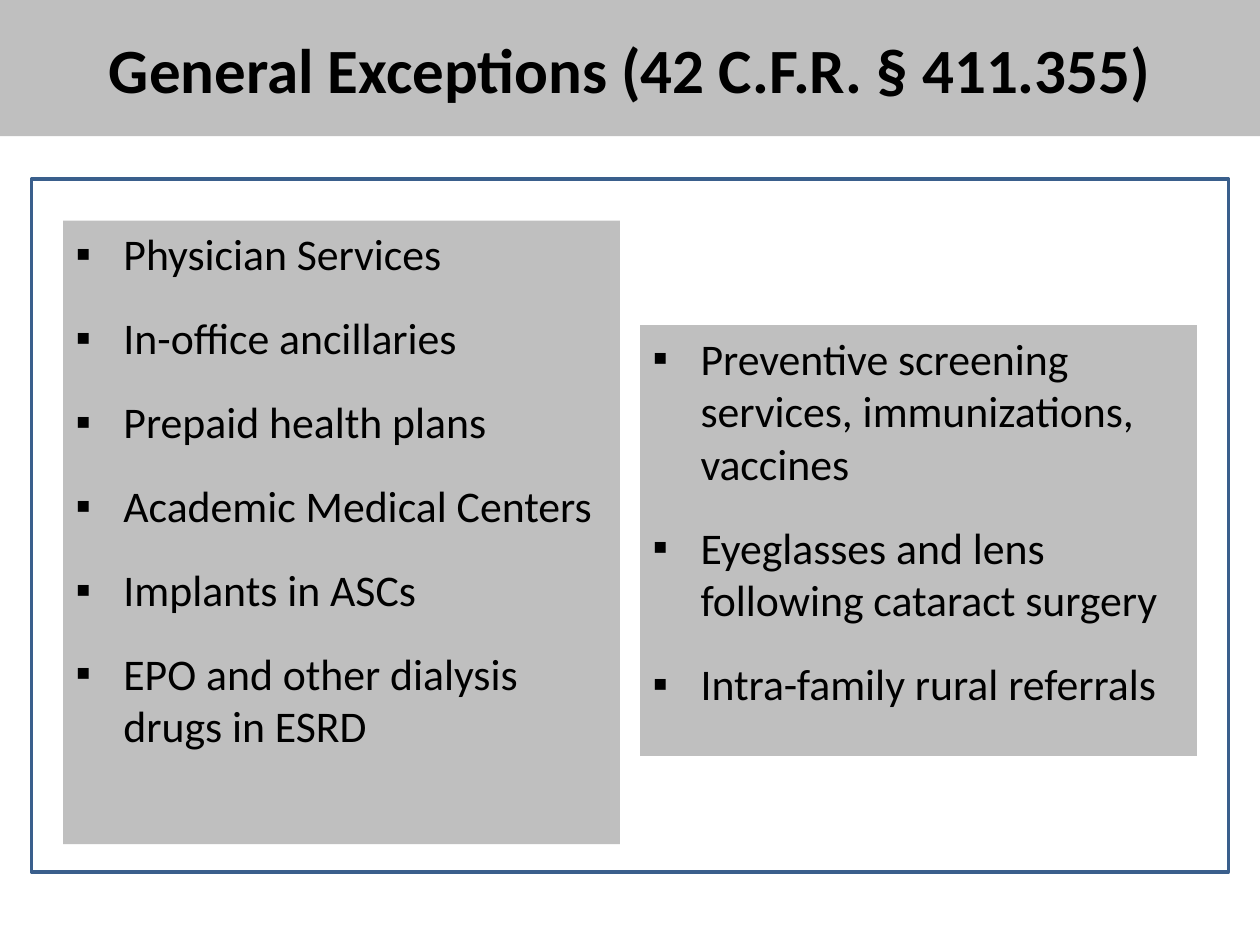
from dataclasses import dataclass

from lxml.etree import SubElement
from pptx import Presentation
from pptx.dml.color import RGBColor
from pptx.enum.shapes import MSO_SHAPE
from pptx.enum.text import MSO_ANCHOR, MSO_AUTO_SIZE, PP_ALIGN
from pptx.oxml.ns import qn
from pptx.util import Inches, Pt

HEADING = "General Exceptions (42 C.F.R. § 411.355)"
EXCEPTIONS = [
    {
        "top": 1.75,
        "height": 4.95,
        "items": [
            "Physician Services",
            "In-office ancillaries",
            "Prepaid health plans",
            "Academic Medical Centers",
            "Implants in ASCs",
            "EPO and other dialysis drugs in ESRD",
        ],
    },
    {
        "top": 2.58,
        "height": 3.42,
        "items": [
            "Preventive screening services, immunizations, vaccines",
            "Eyeglasses and lens following cataract surgery",
            "Intra-family rural referrals",
        ],
    },
]


@dataclass(frozen=True)
class Theme:
    font: str = "Calibri"
    text: RGBColor = RGBColor(0x00, 0x00, 0x00)
    panel: RGBColor = RGBColor(0xBF, 0xBF, 0xBF)
    border: RGBColor = RGBColor(0x3A, 0x5F, 0x8C)
    heading_size: int = 36
    item_size: int = 25
    item_gap: int = 18
    border_width: int = 2


THEME = Theme()
SLIDE_WIDTH, SLIDE_HEIGHT = 10, 7.5
MARGIN, COLUMN_WIDTH = 0.5, 4.42
COLUMN_STEP = SLIDE_WIDTH - 2 * MARGIN - COLUMN_WIDTH
INDENT = Inches(0.38)


def place(panel, left, top, width, height):
    panel.left, panel.top = Inches(left), Inches(top)
    panel.width, panel.height = Inches(width), Inches(height)
    panel.fill.solid()
    panel.fill.fore_color.rgb = THEME.panel
    panel.text_frame.word_wrap = True
    panel.text_frame.auto_size = MSO_AUTO_SIZE.NONE


def format_runs(paragraph, size, bold=False):
    for run in paragraph.runs:
        run.font.name = THEME.font
        run.font.size = Pt(size)
        run.font.bold = bold
        run.font.color.rgb = THEME.text


def add_bullet(paragraph):
    paragraph.space_before = Pt(0)
    paragraph.space_after = Pt(THEME.item_gap)
    properties = paragraph._p.get_or_add_pPr()
    properties.set("marL", str(INDENT))
    properties.set("indent", str(-INDENT))
    SubElement(properties, qn("a:buChar")).set("char", "▪")


def main():
    presentation = Presentation()
    presentation.slide_width = Inches(SLIDE_WIDTH)
    presentation.slide_height = Inches(SLIDE_HEIGHT)
    slide = presentation.slides.add_slide(
        presentation.slide_layouts.get_by_name("Two Content")
    )
    heading, *columns = list(slide.placeholders)[:3]

    place(heading, 0, 0, SLIDE_WIDTH, 1.08)
    heading.text_frame.text = HEADING
    heading.text_frame.vertical_anchor = MSO_ANCHOR.MIDDLE
    heading_line = heading.text_frame.paragraphs[0]
    heading_line.alignment = PP_ALIGN.CENTER
    format_runs(heading_line, THEME.heading_size, bold=True)

    for index, (column, group) in enumerate(zip(columns, EXCEPTIONS)):
        left = MARGIN + index * COLUMN_STEP
        place(column, left, group["top"], COLUMN_WIDTH, group["height"])
        column.text_frame.text = "\n".join(group["items"])
        for item in column.text_frame.paragraphs:
            add_bullet(item)
            format_runs(item, THEME.item_size)

    border = slide.shapes.add_shape(
        MSO_SHAPE.RECTANGLE, Inches(0.25), Inches(1.42), Inches(9.5), Inches(5.5)
    )
    border.shadow.inherit = False
    border.fill.background()
    border.line.color.rgb = THEME.border
    border.line.width = Pt(THEME.border_width)

    presentation.save("out.pptx")


if __name__ == "__main__":
    main()
